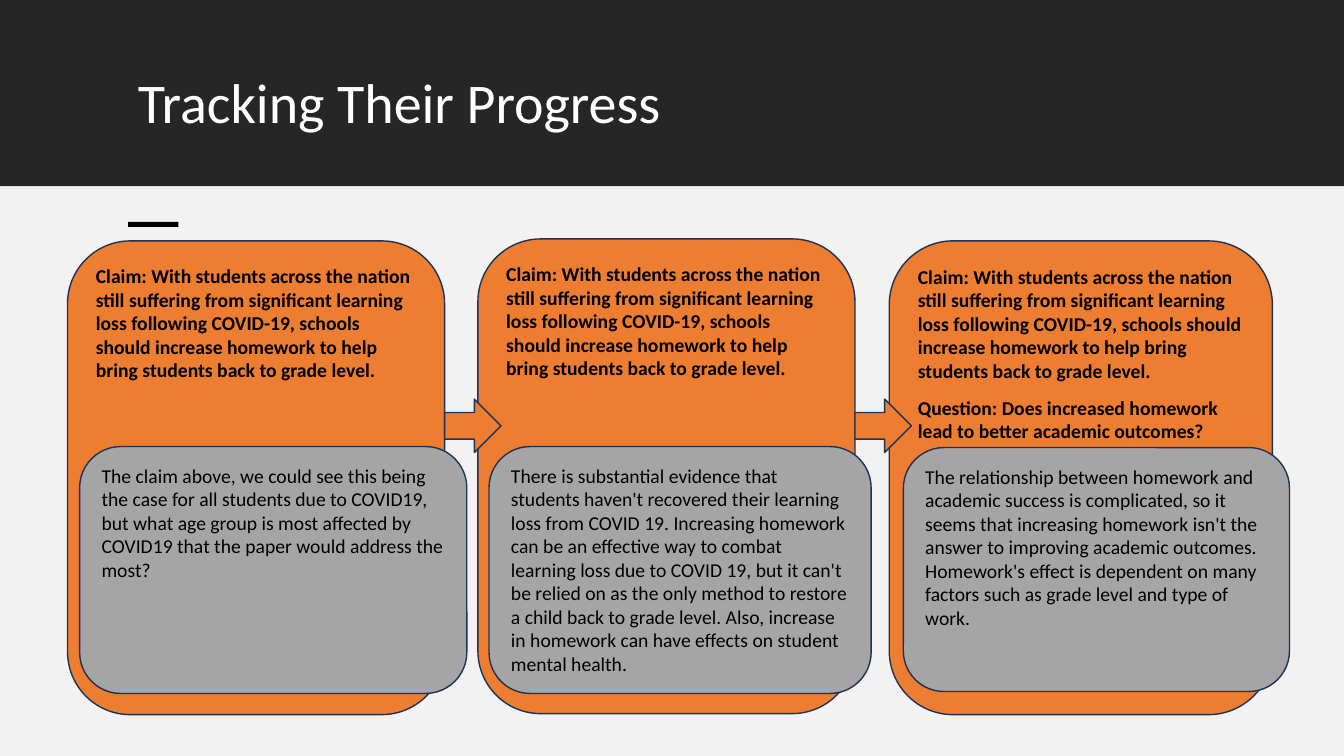
from pptx import Presentation
from pptx.dml.color import RGBColor
from pptx.enum.shapes import MSO_SHAPE
from pptx.enum.text import MSO_ANCHOR, PP_ALIGN
from pptx.util import Inches, Pt

RECTANGLE = MSO_SHAPE.RECTANGLE
ROUNDED = MSO_SHAPE.ROUNDED_RECTANGLE
ARROW = MSO_SHAPE.RIGHT_ARROW
TOP = MSO_ANCHOR.TOP
LEFT = PP_ALIGN.LEFT

COLORS = {
    "header": "262626",
    "body": "F2F2F2",
    "claim": "ED7D31",
    "response": "A5A5A5",
    "outline": "1E3256",
    "ink": "000000",
    "title": "FFFFFF",
}
FONT = "Calibri"
SLIDE_WIDTH, SLIDE_HEIGHT = Inches(13.33), Inches(7.5)
COLUMN, ROW = SLIDE_WIDTH / 1333, SLIDE_HEIGHT / 750
HEADER_ROWS = 185
TITLE_FORMAT = {"size": Pt(40), "bold": False}
CLAIM_FORMAT = {"size": Pt(14), "bold": True}
RESPONSE_FORMAT = {"size": Pt(14), "bold": False}

CLAIM = (
    "Claim: With students across the nation still suffering from significant learning loss "
    "following COVID-19, schools should increase homework to help bring students back to grade level."
)
QUESTION = "Question: Does increased homework lead to better academic outcomes?"
STAGES = [
    {
        "box": (67, 239, 374, 470),
        "response_box": (12, 204, 384, 245),
        "claims": [CLAIM],
        "response": "The claim above, we could see this being the case for all students due to COVID19, "
        "but what age group is most affected by COVID19 that the paper would address the most?",
    },
    {
        "box": (474, 237, 374, 471),
        "response_box": (11, 206, 379, 245),
        "claims": [CLAIM],
        "response": "There is substantial evidence that students haven't recovered their learning loss "
        "from COVID 19. Increasing homework can be an effective way to combat learning loss due to "
        "COVID 19, but it can't be relied on as the only method to restore a child back to grade level. "
        "Also, increase in homework can have effects on student mental health.",
    },
    {
        "box": (882, 239, 380, 470),
        "response_box": (14, 205, 383, 242),
        "claims": [CLAIM, QUESTION],
        "response": "The relationship between homework and academic success is complicated, so it seems "
        "that increasing homework isn't the answer to improving academic outcomes. Homework's effect "
        "is dependent on many factors such as grade level and type of work.",
    },
]


def to_lengths(box):
    left, top, width, height = box
    return round(left * COLUMN), round(top * ROW), round(width * COLUMN), round(height * ROW)


def add_block(slide, kind, box, fill, outline=None):
    shape = slide.shapes.add_shape(kind, *to_lengths(box))
    shape.shadow.inherit = False
    shape.fill.solid()
    shape.fill.fore_color.rgb = RGBColor.from_string(COLORS[fill])
    if outline:
        shape.line.color.rgb = RGBColor.from_string(COLORS[outline])
        shape.line.width = Pt(1)
    else:
        shape.line.fill.background()
    return shape


def write_text(shape, texts, color, text_format, line_spacing=1.0):
    frame = shape.text_frame
    frame.word_wrap = True
    frame.vertical_anchor = TOP
    for index, text in enumerate(texts):
        paragraph = frame.add_paragraph() if index else frame.paragraphs[0]
        paragraph.alignment = LEFT
        paragraph.line_spacing = line_spacing
        paragraph.space_before = Pt(9.75 if index else 0)
        run = paragraph.add_run()
        run.text = text
        run.font.color.rgb = RGBColor.from_string(COLORS[color])
        for name, value in {"name": FONT, **text_format}.items():
            setattr(run.font, name, value)


def add_header(slide, box):
    left, top, width, height = box
    add_block(slide, RECTANGLE, box, "header")
    title = slide.shapes.add_textbox(*to_lengths((left + 127, top + 70, 1081, 98)))
    write_text(title, ["Tracking Their Progress"], "title", TITLE_FORMAT, 0.9)


def add_body(slide, box):
    left, top, width, height = box
    add_block(slide, RECTANGLE, box, "body")
    add_block(slide, RECTANGLE, (left + 127, top + 35, 50, 5), "ink")


def add_stage(slide, stage):
    left, top, width, height = stage["box"]
    card = add_block(slide, ROUNDED, stage["box"], "claim", "outline")
    write_text(card, stage["claims"], "ink", CLAIM_FORMAT)
    inset_left, inset_top, response_width, response_height = stage["response_box"]
    response_box = (left + inset_left, top + inset_top, response_width, response_height)
    response = add_block(slide, ROUNDED, response_box, "response", "outline")
    write_text(response, [stage["response"]], "ink", RESPONSE_FORMAT)


def add_stage_arrow(slide, box):
    left, top, width, height = box
    add_block(slide, ARROW, (left + width, 396, 56, 53), "claim", "outline")


def main():
    presentation = Presentation()
    presentation.slide_width, presentation.slide_height = SLIDE_WIDTH, SLIDE_HEIGHT
    slide = presentation.slides.add_slide(presentation.slide_layouts[6])
    add_header(slide, (0, 0, 1333, HEADER_ROWS))
    add_body(slide, (0, HEADER_ROWS, 1333, 750 - HEADER_ROWS))
    for stage in STAGES:
        add_stage(slide, stage)
    for stage in STAGES[:-1]:
        add_stage_arrow(slide, stage["box"])
    presentation.save("out.pptx")


if __name__ == "__main__":
    main()
